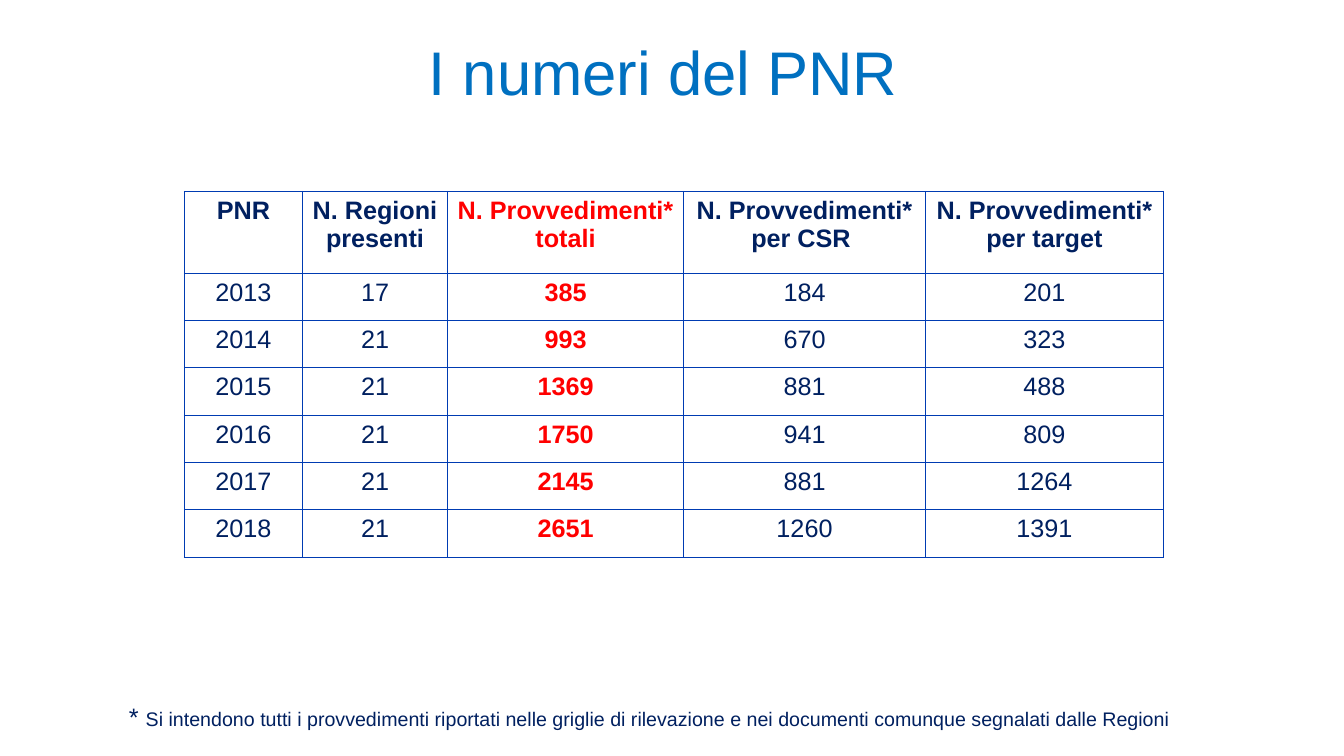
from lxml import etree
from pptx import Presentation
from pptx.dml.color import RGBColor
from pptx.enum.text import MSO_ANCHOR, MSO_AUTO_SIZE, PP_ALIGN
from pptx.oxml.ns import qn
from pptx.util import Inches, Pt

CENTER = PP_ALIGN.CENTER
LEFT = PP_ALIGN.LEFT
MIDDLE = MSO_ANCHOR.MIDDLE
TOP = MSO_ANCHOR.TOP
NO_AUTOFIT = MSO_AUTO_SIZE.NONE

TITLE_BLUE = RGBColor(0x00, 0x70, 0xC0)
NAVY = RGBColor(0x00, 0x20, 0x60)
RED = RGBColor(0xFF, 0x00, 0x00)
BORDER_BLUE = RGBColor(0x00, 0x3B, 0xB2)

FONT = "Arial"
SLIDE_WIDTH = 13.33
SLIDE_HEIGHT = 7.5
TABLE_LEFT = 1.83
TABLE_TOP = 1.9
COLUMN_WIDTHS = [1.17, 1.44, 2.34, 2.4, 2.36]
HEADER_HEIGHT = 0.81
ROW_HEIGHT = 0.47
CELL_MARGIN = 0.08
TOTAL_COLUMN = 2

HEADERS = [
    "PNR",
    "N. Regioni presenti",
    "N. Provvedimenti* totali",
    "N. Provvedimenti* per CSR ",
    "N. Provvedimenti* per target",
]
YEARS = [
    (2013, 17, 385, 184, 201),
    (2014, 21, 993, 670, 323),
    (2015, 21, 1369, 881, 488),
    (2016, 21, 1750, 941, 809),
    (2017, 21, 2145, 881, 1264),
    (2018, 21, 2651, 1260, 1391),
]
FOOTNOTE = (
    "Si intendono tutti i provvedimenti riportati nelle griglie di rilevazione "
    "e nei documenti comunque segnalati dalle Regioni"
)


def add_run(paragraph, text, size, color, bold=False):
    run = paragraph.add_run()
    run.text = text
    font_values = {"name": FONT, "size": Pt(size), "bold": bold}
    for attribute, value in font_values.items():
        setattr(run.font, attribute, value)
    run.font.color.rgb = color


def add_text(slide, box, runs, alignment=LEFT, anchor=TOP, line_spacing=1.0):
    text_box = slide.shapes.add_textbox(*map(Inches, box))
    frame = text_box.text_frame
    frame_values = {
        "word_wrap": True,
        "auto_size": NO_AUTOFIT,
        "vertical_anchor": anchor,
    }
    for attribute, value in frame_values.items():
        setattr(frame, attribute, value)
    paragraph = frame.paragraphs[0]
    paragraph.alignment = alignment
    paragraph.line_spacing = line_spacing
    for run in runs:
        add_run(paragraph, *run)


def set_borders(cell):
    properties = cell._tc.get_or_add_tcPr()
    for side in ("a:lnL", "a:lnR", "a:lnT", "a:lnB"):
        line = etree.SubElement(properties, qn(side), w=str(Pt(1)))
        fill = etree.SubElement(line, qn("a:solidFill"))
        etree.SubElement(fill, qn("a:srgbClr"), val=str(BORDER_BLUE))


def fill_cell(cell, text, color, bold):
    set_borders(cell)
    cell.fill.background()
    cell_values = {
        "margin_left": Inches(CELL_MARGIN),
        "margin_right": Inches(CELL_MARGIN),
        "vertical_anchor": TOP,
    }
    for attribute, value in cell_values.items():
        setattr(cell, attribute, value)
    paragraph = cell.text_frame.paragraphs[0]
    paragraph.alignment = CENTER
    add_run(paragraph, text, 18, color, bold)


def add_numbers_table(slide):
    rows = [HEADERS, *YEARS]
    row_heights = [HEADER_HEIGHT] + [ROW_HEIGHT] * len(YEARS)
    box = (TABLE_LEFT, TABLE_TOP, sum(COLUMN_WIDTHS), sum(row_heights))
    table = slide.shapes.add_table(
        len(rows), len(HEADERS), *map(Inches, box)
    ).table
    for flag in ("first_row", "horz_banding"):
        setattr(table, flag, False)
    for column, width in zip(table.columns, COLUMN_WIDTHS):
        column.width = Inches(width)
    for row, height in zip(table.rows, row_heights):
        row.height = Inches(height)
    for row_index, values in enumerate(rows):
        for column_index, value in enumerate(values):
            is_total = column_index == TOTAL_COLUMN
            fill_cell(
                table.cell(row_index, column_index),
                str(value),
                RED if is_total else NAVY,
                is_total or row_index == 0,
            )


def main():
    presentation = Presentation()
    presentation.slide_width = Inches(SLIDE_WIDTH)
    presentation.slide_height = Inches(SLIDE_HEIGHT)
    slide = presentation.slides.add_slide(presentation.slide_layouts[6])
    add_text(
        slide,
        (1.5, 0.5, SLIDE_WIDTH - 2 * 1.5, 0.58),
        [("I numeri del PNR ", 44, TITLE_BLUE)],
        CENTER,
        MIDDLE,
        0.7,
    )
    add_numbers_table(slide)
    add_text(
        slide,
        (1.18, 6.91, 10.75, 0.4),
        [("* ", 18, NAVY), (FOOTNOTE, 14, NAVY)],
    )
    presentation.save("out.pptx")


if __name__ == "__main__":
    main()
